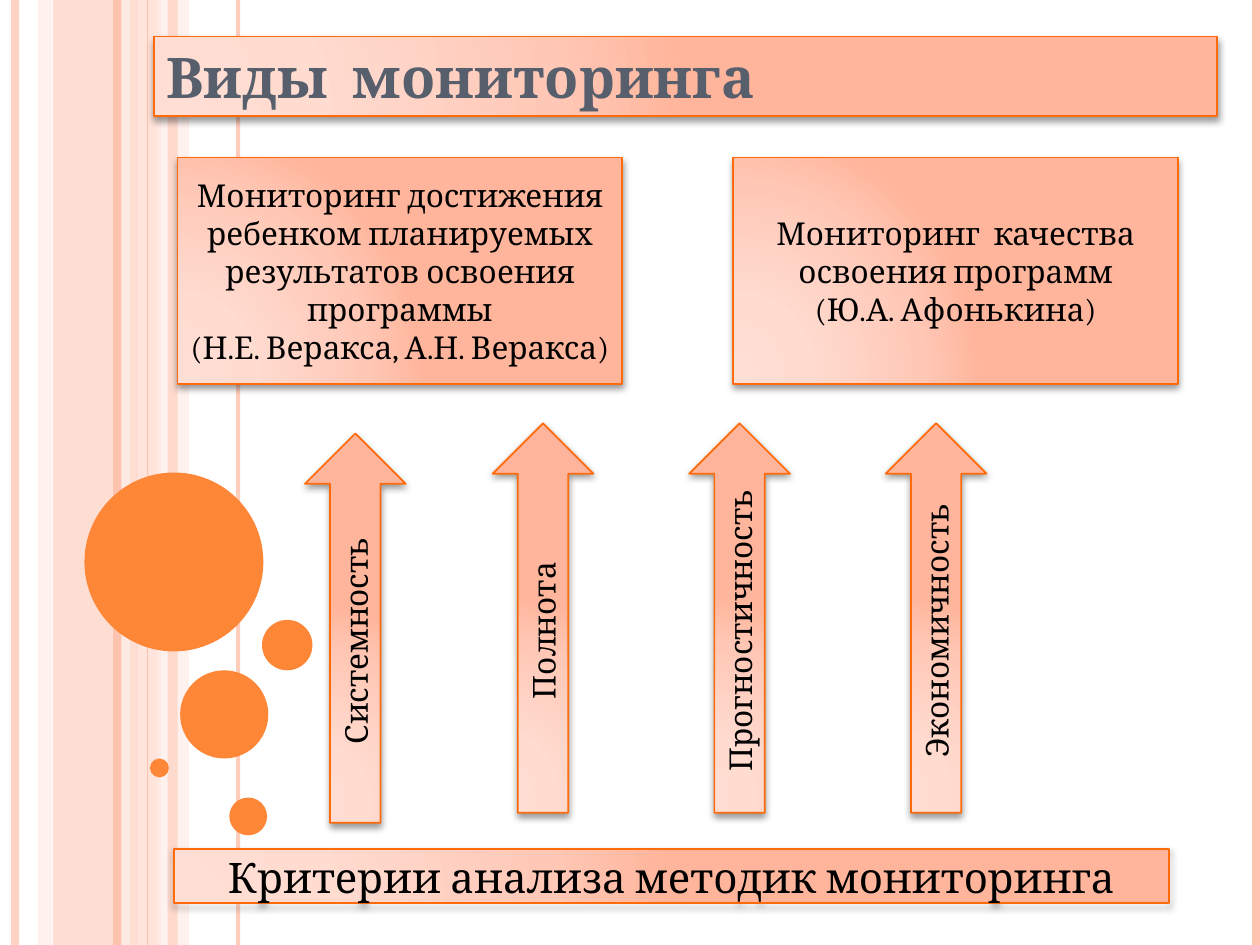
from dataclasses import dataclass

import lxml.etree
import pptx
import pptx.dml.color
import pptx.enum.shapes
import pptx.enum.text
import pptx.oxml
import pptx.oxml.ns
import pptx.util

COLORS = {
    "stripe": "FEC3AE", "pale": "FFD9CE", "faint": "FFEDE8", "circle": "FE8637",
    "border": "FF6B0A", "text": "000000", "title": "575F6D",
}
GRADIENT = {0: "FFDED5", 30: "FFDBD0", 75: "FFC8B6", 100: "FFB59B"}
FONT = "Cambria"
COLS, ROWS = 100, 75
SHAPE = pptx.enum.shapes.MSO_SHAPE
ALIGN = pptx.enum.text.PP_ALIGN
qn = pptx.oxml.ns.qn

prs = pptx.Presentation()
prs.slide_width, prs.slide_height = pptx.util.Inches(10), pptx.util.Inches(7.5)
s = prs.slides.add_slide(prs.slide_layouts[5])


@dataclass
class Box:
    """A place on the grid of COLS by ROWS."""
    col: float
    row: float
    cols: float
    rows: float

    def emu(self) -> tuple[int, ...]:
        x, y = prs.slide_width / COLS, prs.slide_height / ROWS
        return tuple(round(v) for v in
                     (self.col * x, self.row * y, self.cols * x, self.rows * y))


@dataclass
class Band:
    col: float
    cols: float
    color: str
    opacity: int


@dataclass
class Stripe:
    col: float
    points: float
    color: str = "stripe"
    opacity: int = 100


@dataclass
class Panel:
    box: Box
    lines: list[str]
    size: int = 18
    preset: SHAPE = SHAPE.RECTANGLE


BANDS = [Band(4.2, 6.7, "stripe", 54), Band(3, 1.1, "pale", 36),
         Band(10.8, 2, "pale", 70), Band(12.5, 2.5, "faint", 71)]
STRIPES = [Stripe(1.2, 4.5, opacity=73), Stripe(10, 4.5, "faint", 83),
           Stripe(9.3, 4.5), Stripe(18.9, 2.25, opacity=82),
           Stripe(11.7, 0.75), Stripe(99.7, 4.5)]
NARROW_BAND = Band(13.3, 0.8, "stripe", 51)
CIRCLES = [(6.7, 37.5, 14.2), (14.3, 53.2, 7), (11.9, 60.2, 1.5),
           (18.2, 63.3, 3), (20.8, 49.2, 4)]
ARROWS = [(24.2, 34.4, "Системность")] + [
    (39.1 + 15.6 * i, 33.6, word)
    for i, word in enumerate(["Полнота", "Прогностичность", "Экономичность"])]
PANELS = [
    Panel(Box(14.1, 12.5, 35.3, 18),
          ["Мониторинг достижения ребенком планируемых результатов освоения программы",
           "(Н.Е. Веракса, А.Н. Веракса)"]),
    Panel(Box(58.2, 12.5, 35.3, 18),
          ["Мониторинг  качества освоения программ", "(Ю.А. Афонькина)"]),
    *(Panel(Box(col, row, 8, 30.9), [word], preset=SHAPE.UP_ARROW)
      for col, row, word in ARROWS),
    Panel(Box(13.8, 67.4, 79, 4.3), ["Критерии анализа методик мониторинга"], 24),
]


def rgb(name: str) -> pptx.dml.color.RGBColor:
    return pptx.dml.color.RGBColor.from_string(COLORS[name])


def set_opacity(element, percent: int) -> None:
    if percent < 100:
        for clr in element.iter(qn("a:srgbClr")):
            lxml.etree.SubElement(clr, qn("a:alpha"), val=str(percent * 1000))


def add_plain(preset: SHAPE, box: Box, color: str, opacity: int = 100) -> None:
    sp = s.shapes.add_shape(preset, *box.emu())
    sp.shadow.inherit = False
    sp.fill.solid()
    sp.fill.fore_color.rgb = rgb(color)
    sp.line.fill.background()
    set_opacity(sp._element.spPr, opacity)


def add_band(band: Band) -> None:
    add_plain(SHAPE.RECTANGLE, Box(band.col, 0, band.cols, ROWS), band.color, band.opacity)


def add_stripe(stripe: Stripe) -> None:
    x, y, _, height = Box(stripe.col, 0, 0, ROWS).emu()
    line = s.shapes.add_connector(pptx.enum.shapes.MSO_CONNECTOR.STRAIGHT, x, y, x, height)
    line.line.width = pptx.util.Pt(stripe.points)
    line.line.color.rgb = rgb(stripe.color)
    spPr = line._element.spPr
    set_opacity(spPr, stripe.opacity)
    lxml.etree.SubElement(spPr, qn("a:effectLst"))


def style_panel(sp) -> None:
    """Give a shape the peach gradient, orange border and soft shadow."""
    sp.fill.solid()
    sp.line.color.rgb = rgb("border")
    sp.line.width = pptx.util.Pt(1)
    sp.shadow.inherit = False
    spPr = sp._element.spPr
    ns = pptx.oxml.ns.nsdecls("a")
    stops = "".join(f'<a:gs pos="{pos * 1000}"><a:srgbClr val="{color}"/></a:gs>'
                    for pos, color in GRADIENT.items())
    spPr.replace(spPr.find(qn("a:solidFill")), pptx.oxml.parse_xml(
        f'<a:gradFill {ns} rotWithShape="1"><a:gsLst>{stops}</a:gsLst><a:path path="circle">'
        '<a:fillToRect l="5000" t="100000" r="120000" b="10000"/></a:path></a:gradFill>'))
    spPr.find(qn("a:effectLst")).append(pptx.oxml.parse_xml(
        f'<a:outerShdw {ns} blurRad="{pptx.util.Pt(4)}" dist="{pptx.util.Pt(2)}" '
        'dir="5400000" rotWithShape="0"><a:srgbClr val="000000"><a:alpha val="40000"/>'
        '</a:srgbClr></a:outerShdw>'))


def write(sp, lines: list[str], size: int, color: str, align: ALIGN, bold: bool = False) -> None:
    tf = sp.text_frame
    tf.text = "\n".join(lines)
    tf.word_wrap = True
    tf.auto_size = pptx.enum.text.MSO_AUTO_SIZE.NONE
    tf.vertical_anchor = pptx.enum.text.MSO_ANCHOR.MIDDLE
    for p in tf.paragraphs:
        p.alignment = align
        for r in p.runs:
            r.font.name, r.font.size, r.font.bold = FONT, pptx.util.Pt(size), bold
            r.font.color.rgb = rgb(color)


def add_panel(panel: Panel) -> None:
    sp = s.shapes.add_shape(panel.preset, *panel.box.emu())
    style_panel(sp)
    write(sp, panel.lines, panel.size, "text", ALIGN.CENTER)
    if panel.preset == SHAPE.UP_ARROW:
        sp.text_frame._txBody.bodyPr.set("vert", "vert270")


def place_title(text: str, box: Box) -> None:
    sp = s.shapes.title
    sp.left, sp.top, sp.width, sp.height = box.emu()
    sp._element.spPr.append(pptx.oxml.parse_xml(
        f'<a:prstGeom {pptx.oxml.ns.nsdecls("a")} prst="rect"><a:avLst/></a:prstGeom>'))
    style_panel(sp)
    write(sp, [text], 32, "title", ALIGN.LEFT, bold=True)
    s.shapes._spTree.append(sp._element)  # bring to front


def main() -> None:
    for band in BANDS:
        add_band(band)
    for stripe in STRIPES:
        add_stripe(stripe)
    add_band(NARROW_BAND)
    for col, row, size in CIRCLES:
        add_plain(SHAPE.OVAL, Box(col, row, size, size), "circle")
    for panel in PANELS:
        add_panel(panel)
    place_title("Виды  мониторинга", Box(12.2, 2.9, 84.4, 6.3))
    prs.save("out.pptx")


if __name__ == "__main__":
    main()
